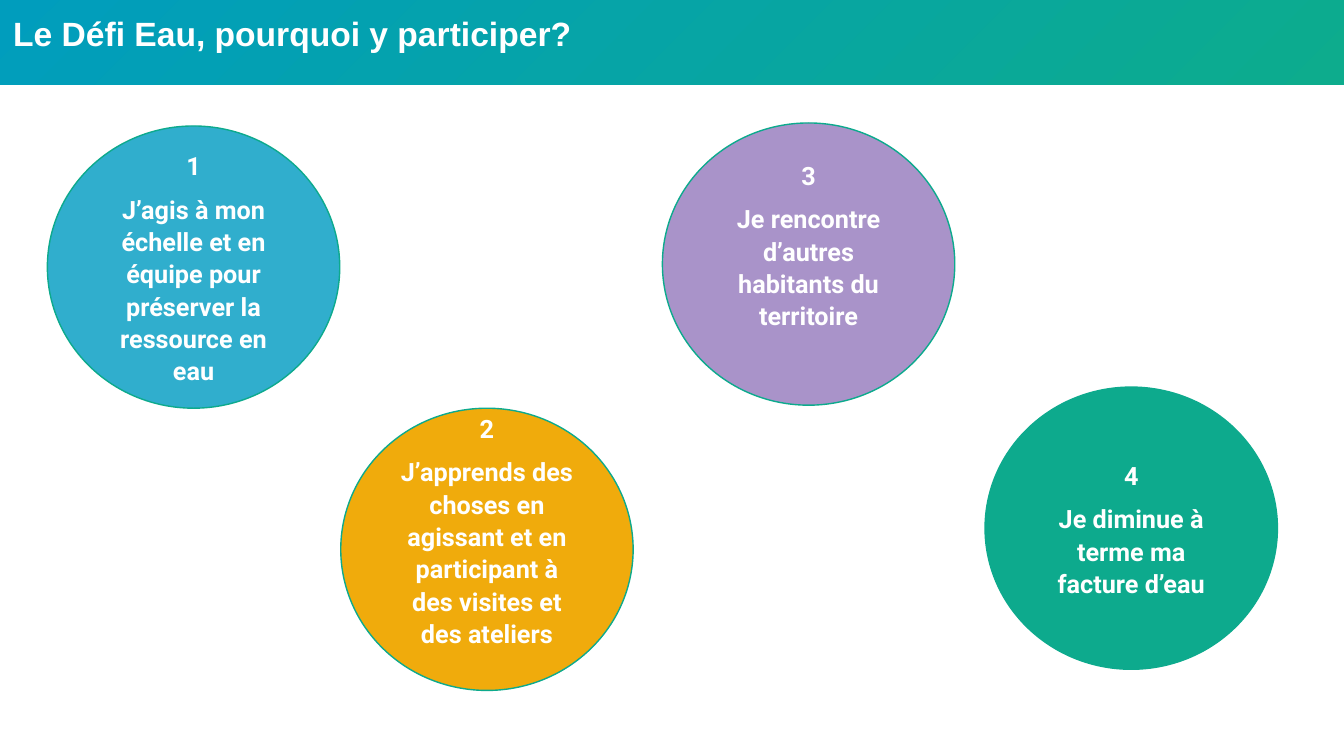
"""Build the slide on the reasons to take part in the Défi Eau."""
from pptx import Presentation
from pptx.dml.color import RGBColor
from pptx.enum.shapes import MSO_SHAPE
from pptx.enum.text import MSO_ANCHOR, MSO_AUTO_SIZE, PP_ALIGN
from pptx.util import Inches, Pt

WHITE = RGBColor(0xFF, 0xFF, 0xFF)
BANNER_BLUE = RGBColor(0x00, 0x9D, 0xBD)
BANNER_GREEN = RGBColor(0x0D, 0xAC, 0x8D)
SKY = RGBColor(0x30, 0xAE, 0xCD)
AMBER = RGBColor(0xF0, 0xAB, 0x0C)
LILAC = RGBColor(0xA9, 0x93, 0xC9)
GREEN = RGBColor(0x0D, 0xAA, 0x8D)

OVAL = MSO_SHAPE.OVAL
TOP, MIDDLE = MSO_ANCHOR.TOP, MSO_ANCHOR.MIDDLE
LEFT, CENTER = PP_ALIGN.LEFT, PP_ALIGN.CENTER
NO_AUTOFIT = MSO_AUTO_SIZE.NONE

SLIDE_WIDTH, SLIDE_HEIGHT = Inches(13.33), Inches(7.5)
BANNER_HEIGHT = Inches(0.84)
BANNER_INSET = Inches(0.13)
CIRCLE_WIDTH, CIRCLE_HEIGHT = Inches(2.9), Inches(2.8)
CENTRED_INSET, RAISED_INSET = Inches(0.05), Inches(0.44)

BANNER_FONT = {"name": "Arial", "size": Pt(24), "bold": True}
REASON_FONT = {"name": "Roboto", "size": Pt(18), "bold": True}
REASON_PARAGRAPH = {"alignment": CENTER, "line_spacing": 1.07, "space_after": Pt(8)}

REASONS = [
    (0.47, 1.25, SKY, CENTRED_INSET,
     "J’agis à mon échelle et en équipe pour préserver la ressource en eau"),
    (3.38, 4.05, AMBER, RAISED_INSET,
     "J’apprends des choses en agissant et en participant à des visites et des ateliers"),
    (6.57, 1.22, LILAC, RAISED_INSET,
     "Je rencontre d’autres habitants du territoire"),
    (9.77, 3.84, GREEN, CENTRED_INSET,
     "Je diminue à terme ma facture d’eau"),
]


def apply_format(target, values):
    """Set each attribute of target from a dict of format values."""
    for attribute, value in values.items():
        setattr(target, attribute, value)


def write_paragraph(paragraph, text, layout, font):
    """Fill a paragraph with white text in the given format."""
    paragraph.text = text
    apply_format(paragraph, layout)
    apply_format(paragraph.font, font)
    paragraph.font.color.rgb = WHITE


def format_banner(banner, text):
    """Turn the title placeholder into the gradient banner."""
    apply_format(banner, {"left": 0, "top": 0, "width": SLIDE_WIDTH,
                          "height": BANNER_HEIGHT})
    banner.fill.gradient()
    banner.fill.gradient_angle = 315
    for stop, color in zip(banner.fill.gradient_stops, (BANNER_BLUE, BANNER_GREEN)):
        stop.color.rgb = color
    frame = banner.text_frame
    apply_format(frame, {"auto_size": NO_AUTOFIT, "word_wrap": True,
                         "vertical_anchor": TOP, "margin_left": BANNER_INSET,
                         "margin_top": BANNER_INSET, "margin_right": BANNER_INSET,
                         "margin_bottom": BANNER_INSET})
    write_paragraph(frame.paragraphs[0], text, {"alignment": LEFT}, BANNER_FONT)


def add_reason(slide, number, left, top, color, bottom_inset, text):
    """Add a numbered circle with one reason."""
    circle = slide.shapes.add_shape(OVAL, Inches(left), Inches(top),
                                    CIRCLE_WIDTH, CIRCLE_HEIGHT)
    circle.shadow.inherit = False
    circle.fill.solid()
    circle.fill.fore_color.rgb = color
    circle.line.color.rgb = GREEN
    circle.line.width = Pt(1)
    frame = circle.text_frame
    apply_format(frame, {"word_wrap": True, "vertical_anchor": MIDDLE,
                         "margin_bottom": bottom_inset})
    write_paragraph(frame.paragraphs[0], str(number), REASON_PARAGRAPH, REASON_FONT)
    write_paragraph(frame.add_paragraph(), text, REASON_PARAGRAPH, REASON_FONT)


def main():
    """Build and save the slide."""
    deck = Presentation()
    deck.slide_width, deck.slide_height = SLIDE_WIDTH, SLIDE_HEIGHT
    slide = deck.slides.add_slide(deck.slide_layouts[5])
    format_banner(slide.shapes.title, "Le Défi Eau, pourquoi y participer?")
    for number, reason in enumerate(REASONS, start=1):
        add_reason(slide, number, *reason)
    deck.save("out.pptx")


if __name__ == "__main__":
    main()
